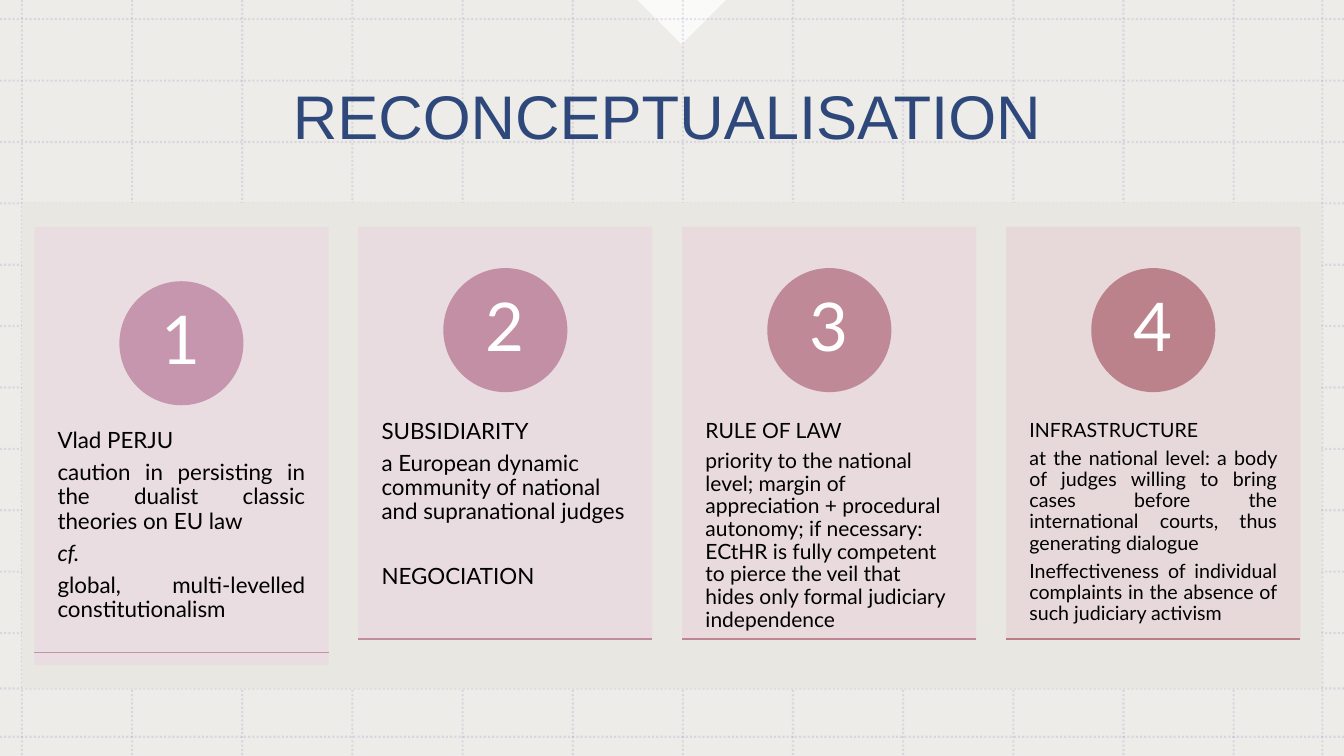
from lxml.etree import SubElement
from pptx import Presentation
from pptx.dml.color import RGBColor
from pptx.enum.dml import MSO_LINE as DASH
from pptx.enum.shapes import MSO_CONNECTOR as CONN, MSO_SHAPE as SHAPE
from pptx.enum.text import MSO_ANCHOR as ANCHOR, PP_ALIGN as ALIGN
from pptx.oxml.ns import qn
from pptx.util import Pt

WIDTH, HEIGHT = 960, 540
COLORS = {
    "back": "EDECE8", "panel": "E8E7E2", "grid": "8D7FBA",
    "title": "002060", "text": "000000", "white": "FFFFFF",
}
CARD_LEFT, CARD_TOP, CARD_STEP, CARD_WIDTH = 24.5, 162, 231.4, 210.2
CIRCLE = 88.6
GRID_X = [15.7 + 78.68 * i for i in range(12)] + [944.6]
GRID_Y = [13.7 + 43.85 * i for i in range(11)] + [491.8, 526.3]
J, L = ALIGN.JUSTIFY, ALIGN.LEFT

CARDS = [
    {"fill": "EADDE3", "circle": "C696AF", "rule": "C493AA", "size": 16,
     "height": 313.2, "drop": 9.4, "text_top": 280.8, "paragraphs": [
         ("Vlad PERJU", J, {}),
         ("caution in persisting in the dualist classic theories on EU law", J, {}),
         ("cf.", J, {"italic": True}),
         ("global, multi-levelled constitutionalism", J, {})]},
    {"fill": "E9DBE0", "circle": "C38FA4", "rule": "C18C9E", "size": 16,
     "height": 294.5, "drop": 0, "text_top": 274.3, "paragraphs": [
         ("SUBSIDIARITY", L, {}),
         ("a European dynamic community of national and supranational judges", L, {}),
         ("NEGOCIATION", L, {"space_before": Pt(23)})]},
    {"fill": "E8D9DD", "circle": "BF8998", "rule": "BD8692", "size": 15,
     "height": 294.5, "drop": 0, "text_top": 274.3, "paragraphs": [
         ("RULE OF LAW", L, {}),
         ("priority to the national level; margin of appreciation + procedural "
          "autonomy; if necessary: ECtHR is fully competent to pierce the veil "
          "that hides only formal judiciary independence", L, {})]},
    {"fill": "E7D8D9", "circle": "BC828C", "rule": "BA7F85", "size": 14,
     "height": 294.5, "drop": 0, "text_top": 274.3, "paragraphs": [
         ("INFRASTRUCTURE", L, {}),
         ("at the national level: a body of judges willing to bring cases before "
          "the international courts, thus generating dialogue", J, {}),
         ("Ineffectiveness of individual complaints in the absence of such "
          "judiciary activism", J, {})]},
]


def apply(obj, values):
    """Set every attribute in values on obj."""
    for name, value in values.items():
        setattr(obj, name, value)


def set_alpha(sp, percent):
    """Make all explicit colours of a shape partly transparent."""
    for clr in sp.element.iter(qn("a:srgbClr")):
        SubElement(clr, qn("a:alpha"), val=str(percent * 1000))


def add_box(s, kind, box, color, alpha=100):
    """Add a filled preset shape without an outline."""
    sp = s.shapes.add_shape(kind, *map(Pt, box))
    sp.shadow.inherit = False
    sp.fill.solid()
    sp.fill.fore_color.rgb = RGBColor.from_string(color)
    sp.line.fill.background()
    if alpha < 100:
        set_alpha(sp, alpha)
    return sp


def add_line(s, ends, color, width):
    """Add a straight line without a shadow."""
    sp = s.shapes.add_connector(CONN.STRAIGHT, *map(Pt, ends))
    sp.line.color.rgb = RGBColor.from_string(color)
    sp.line.width = Pt(width)
    SubElement(sp.element.spPr, qn("a:effectLst"))
    return sp


def write(p, text, font, size, color, **values):
    """Fill a paragraph with one formatted run."""
    italic = values.pop("italic", False)
    apply(p, {"line_spacing": 0.9, **values})
    r = p.add_run()
    r.text = text
    apply(r.font, {"name": font, "size": Pt(size), "italic": italic})
    r.font.color.rgb = RGBColor.from_string(color)


def add_grid(s):
    """Draw the dotted background grid."""
    ends = [(x, 0, x, HEIGHT) for x in GRID_X] + [(0, y, WIDTH, y) for y in GRID_Y]
    for end in ends:
        sp = add_line(s, end, COLORS["grid"], 1.5)
        sp.line.dash_style = DASH.ROUND_DOT
        set_alpha(sp, 20)


def add_title(s, text):
    """Place the title in front of the grid."""
    sp = s.shapes.title
    apply(sp, {"left": Pt(23.8), "top": Pt(26.6), "width": Pt(905.8), "height": Pt(118)})
    sp.text_frame.vertical_anchor = ANCHOR.MIDDLE
    write(sp.text_frame.paragraphs[0], text, "Arial", 44, COLORS["title"],
          alignment=ALIGN.CENTER)
    set_alpha(sp, 80)
    sp.element.getparent().append(sp.element)


def add_card_text(s, left, card):
    """Add the paragraphs of a card."""
    box = s.shapes.add_textbox(*map(Pt, (left, card["text_top"], CARD_WIDTH, 177)))
    tf = box.text_frame
    apply(tf, {"word_wrap": True, "margin_left": Pt(16.6), "margin_right": Pt(16.6),
               "margin_top": Pt(25.9), "margin_bottom": Pt(25.9)})
    for i, (text, align, extra) in enumerate(card["paragraphs"]):
        p = tf.add_paragraph() if i else tf.paragraphs[0]
        write(p, text, "Lato", card["size"], COLORS["text"], alignment=align,
              space_after=Pt(round(card["size"] * 0.35, 1)), **extra)


def add_card(s, index, card):
    """Add a card with its numbered circle, text and bottom rule."""
    left = CARD_LEFT + index * CARD_STEP
    add_box(s, SHAPE.RECTANGLE, (left, CARD_TOP, CARD_WIDTH, card["height"]),
            card["fill"], 90)
    add_card_text(s, left, card)
    circle = add_box(s, SHAPE.OVAL, (left + (CARD_WIDTH - CIRCLE) / 2,
                                     191.5 + card["drop"], CIRCLE, CIRCLE),
                     card["circle"])
    tf = circle.text_frame
    apply(tf, {"vertical_anchor": ANCHOR.MIDDLE, "margin_top": 0, "margin_bottom": 0})
    write(tf.paragraphs[0], str(index + 1), "Lato", 48, COLORS["white"],
          alignment=ALIGN.CENTER)
    y = 456.5 + card["drop"]
    add_line(s, (left, y, left + CARD_WIDTH, y), card["rule"], 1)


def main():
    """Build the slide and save it."""
    prs = Presentation()
    apply(prs, {"slide_width": Pt(WIDTH), "slide_height": Pt(HEIGHT)})
    s = prs.slides.add_slide(prs.slide_layouts[5])
    s.background.fill.solid()
    s.background.fill.fore_color.rgb = RGBColor.from_string(COLORS["back"])
    notch = add_box(s, SHAPE.RIGHT_TRIANGLE, (464.6, -22.3, 44.6, 44.6),
                    COLORS["white"], 75)
    notch.rotation = 315
    add_grid(s)
    add_box(s, SHAPE.RECTANGLE, (15.8, 144.7, 928.1, 347), COLORS["panel"])
    add_title(s, "RECONCEPTUALISATION")
    for index, card in enumerate(CARDS):
        add_card(s, index, card)
    prs.save("out.pptx")


if __name__ == "__main__":
    main()
